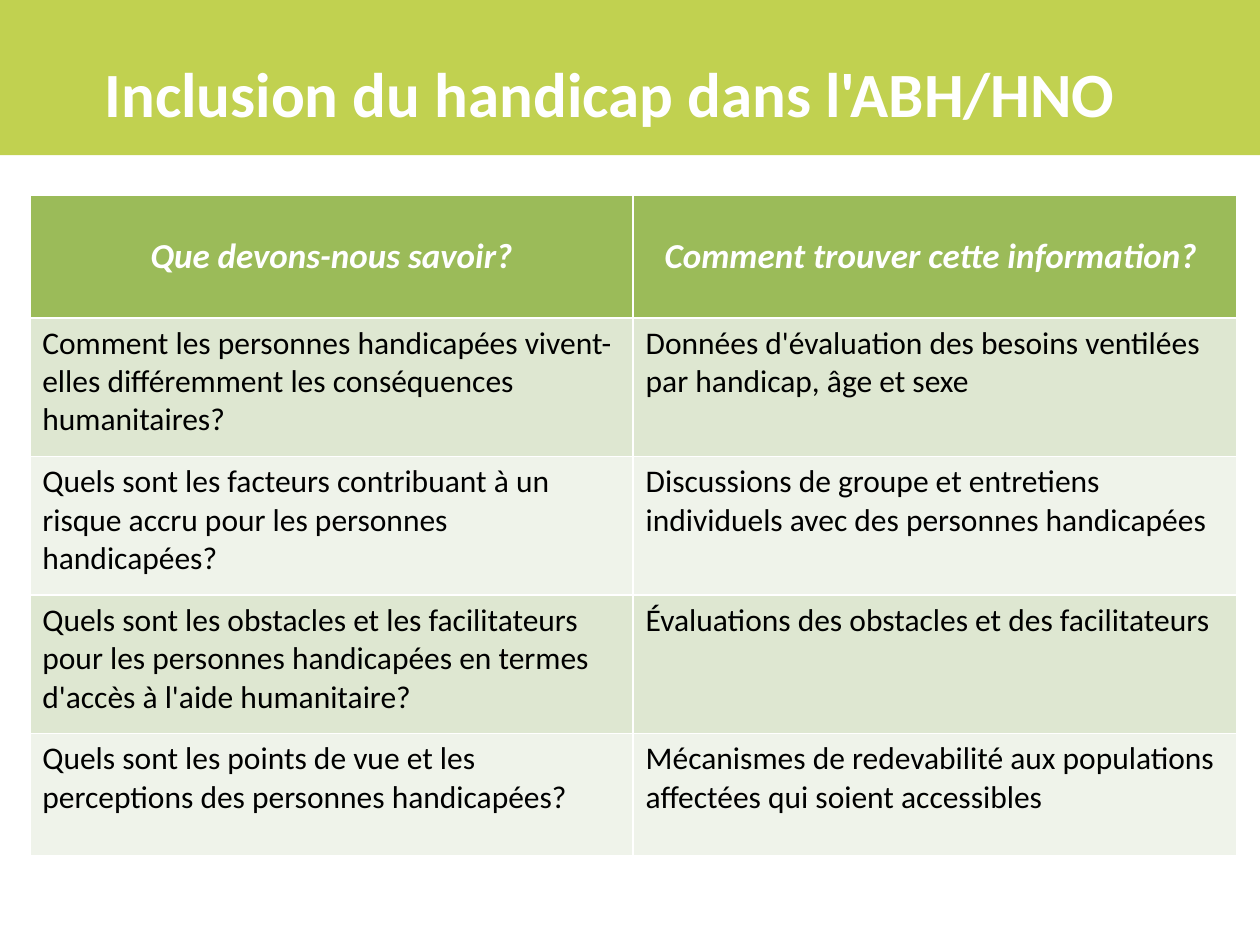
import pptx
import pptx.dml.color
import pptx.enum.shapes
import pptx.enum.text
import pptx.util

Pt = pptx.util.Pt
ALIGN = pptx.enum.text.PP_ALIGN
ANCHOR = pptx.enum.text.MSO_ANCHOR


class Theme:
    font = "Calibri"
    lime = "C1D150"
    head = "9BBB59"
    bands = ("DEE7D1", "EFF3EA")
    white = "FFFFFF"
    black = "000000"
    title_size = 36
    head_size = 20
    body_size = 18


class Deck:
    def __init__(self, theme, width, height):
        self.theme = theme
        self.file = pptx.Presentation()
        self.file.slide_width = Pt(width)
        self.file.slide_height = Pt(height)
        self.slide = self.file.slides.add_slide(self.file.slide_layouts[6])

    def paint(self, fill, color):
        fill.solid()
        fill.fore_color.rgb = pptx.dml.color.RGBColor.from_string(color)

    def label(self, frame, text, size, color, bold=False, italic=False, align=ALIGN.LEFT):
        frame.word_wrap = True
        line = frame.paragraphs[0]
        line.text = text
        line.alignment = align
        font = line.font
        font.name = self.theme.font
        font.size = Pt(size)
        font.bold = bold
        font.italic = italic
        font.color.rgb = pptx.dml.color.RGBColor.from_string(color)

    def band(self, left, top, width, height, color):
        shape = self.slide.shapes.add_shape(
            pptx.enum.shapes.MSO_SHAPE.RECTANGLE, Pt(left), Pt(top), Pt(width), Pt(height))
        shape.shadow.inherit = False
        shape.line.fill.background()
        self.paint(shape.fill, color)

    def title(self, text, left, top, width, height):
        box = self.slide.shapes.add_textbox(Pt(left), Pt(top), Pt(width), Pt(height))
        self.label(box.text_frame, text, self.theme.title_size, self.theme.white,
                   bold=True, align=ALIGN.CENTER)

    def table(self, rows, left, top, width, heights):
        """Draw a table whose first row is the heading."""
        theme = self.theme
        grid = self.slide.shapes.add_table(
            len(rows), len(rows[0]), Pt(left), Pt(top), Pt(width), Pt(sum(heights))).table
        grid.horz_banding = False
        for r, texts in enumerate(rows):
            grid.rows[r].height = Pt(heights[r])
            for c, text in enumerate(texts):
                cell = grid.cell(r, c)
                if r == 0:
                    cell.vertical_anchor = ANCHOR.MIDDLE
                    self.paint(cell.fill, theme.head)
                    self.label(cell.text_frame, text, theme.head_size, theme.white,
                               bold=True, italic=True, align=ALIGN.CENTER)
                else:
                    self.paint(cell.fill, theme.bands[(r - 1) % 2])
                    self.label(cell.text_frame, text, theme.body_size, theme.black)


ROWS = [
    ("Que devons-nous savoir?",
     "Comment trouver cette information? "),
    ("Comment les personnes handicapées vivent-elles différemment les conséquences humanitaires?",
     "Données d'évaluation des besoins ventilées par handicap, âge et sexe"),
    ("Quels sont les facteurs contribuant à un risque accru pour les personnes handicapées?",
     "Discussions de groupe et entretiens individuels avec des personnes handicapées"),
    ("Quels sont les obstacles et les facilitateurs pour les personnes handicapées "
     "en termes d'accès à l'aide humanitaire?",
     "Évaluations des obstacles et des facilitateurs"),
    ("Quels sont les points de vue et les perceptions des personnes handicapées?",
     "Mécanismes de redevabilité aux populations affectées qui soient accessibles"),
]


def main():
    deck = Deck(Theme, 720, 540)
    deck.band(0, -1.4, 720, 90, Theme.lime)
    deck.title("Inclusion du handicap dans l'ABH/HNO", 19.2, 27.5, 659, 51)
    deck.table(ROWS, 17, 111.8, 689.6, [69.8, 79.2, 79.2, 79.2, 69.8])
    deck.file.save("out.pptx")


if __name__ == "__main__":
    main()
